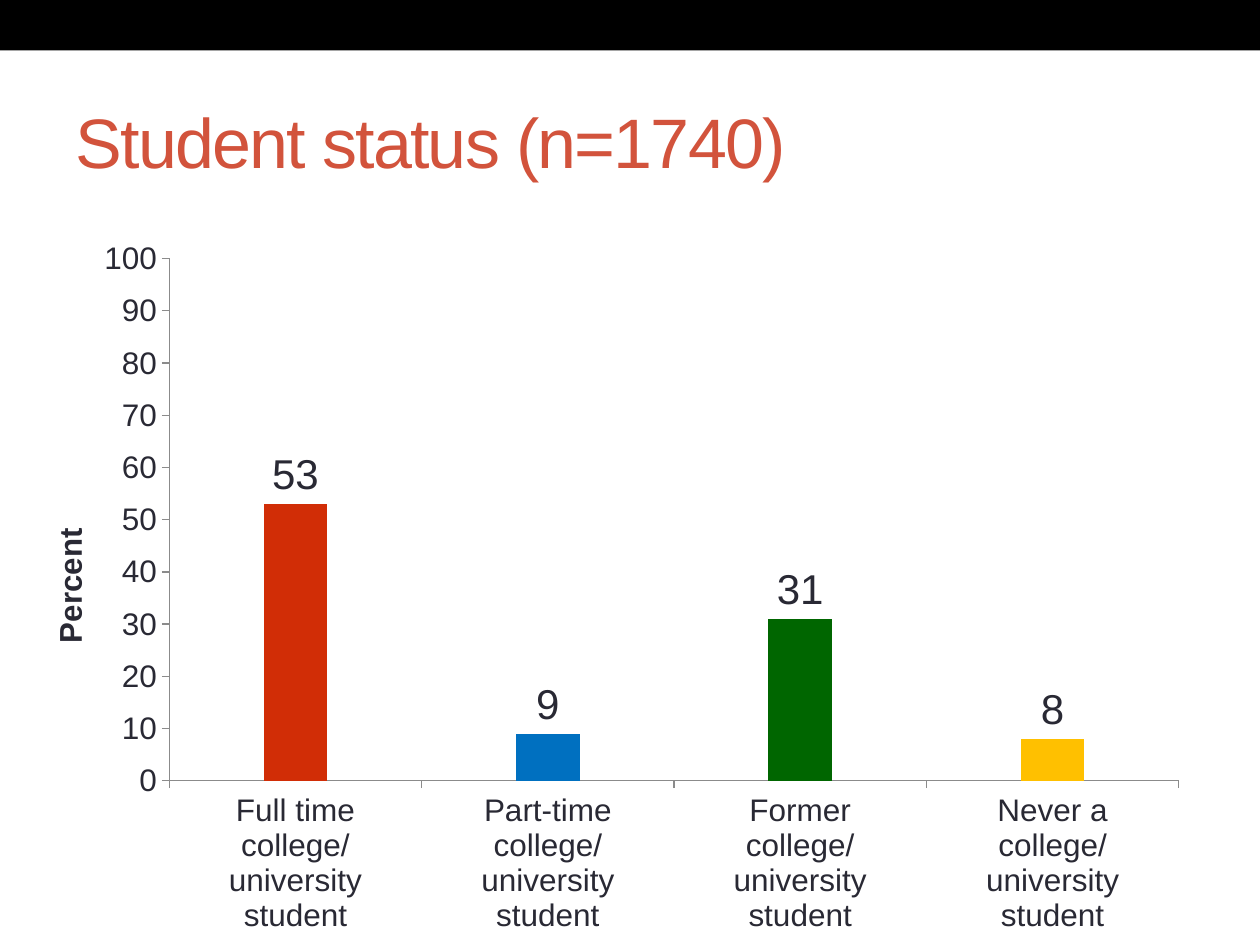
from lxml.etree import SubElement
from pptx import Presentation
from pptx.chart.data import CategoryChartData
from pptx.dml.color import RGBColor
from pptx.enum.chart import XL_CHART_TYPE, XL_LABEL_POSITION, XL_TICK_MARK
from pptx.enum.shapes import MSO_SHAPE
from pptx.enum.text import MSO_ANCHOR, PP_ALIGN
from pptx.oxml import parse_xml
from pptx.oxml.ns import nsdecls, qn
from pptx.util import Cm, Pt

FONT = "Arial"
INK = "292934"
ACCENT = "D2533C"
AXIS_GREY = "8B8B8B"
STATUSES = [
    ("Full time college/university student", 53, "D12D06"),
    ("Part-time college/university student", 9, "0070C0"),
    ("Former college/university student", 31, "006600"),
    ("Never a college/university student", 8, "FFC000"),
]


def colour(value):
    return RGBColor.from_string(value)


def paint(target, value):
    target.fill.solid()
    target.fill.fore_color.rgb = colour(value)


def style_font(font, size, value=INK, bold=False):
    font.name = FONT
    font.size = Pt(size)
    font.bold = bold
    font.color.rgb = colour(value)


def write_text(frame, text, size, value=INK, bold=False, align=None, spacing=None):
    para = frame.paragraphs[0]
    para.alignment = align
    span = para.add_run()
    span.text = text
    style_font(span.font, size, value, bold)
    if spacing is not None:
        span.font._element.set("spc", str(spacing))


def set_layout(parent, index, **settings):
    """Give a chart part a manual layout, placed as its child at index."""
    old = parent.find(qn("c:layout"))
    if old is not None:
        parent.remove(old)
    layout = parse_xml(f"<c:layout {nsdecls('c')}><c:manualLayout/></c:layout>")
    for tag, value in settings.items():
        SubElement(layout[0], qn(f"c:{tag}")).set("val", str(value))
    parent.insert(index, layout)


def add_top_band(page, left, top, width, height):
    band = page.shapes.add_shape(MSO_SHAPE.RECTANGLE, left, top, width, height)
    band.shadow.inherit = False
    paint(band, "000000")
    band.line.fill.background()


def place_title(page, text, left, top, width, height):
    title = page.shapes.title
    title.left, title.top, title.width, title.height = left, top, width, height
    frame = title.text_frame
    frame.vertical_anchor = MSO_ANCHOR.MIDDLE
    write_text(frame, text, 40, ACCENT, align=PP_ALIGN.LEFT, spacing=-100)


def style_axis(axis):
    axis.has_major_gridlines = False
    axis.major_tick_mark = XL_TICK_MARK.OUTSIDE
    axis.minor_tick_mark = XL_TICK_MARK.NONE
    axis.format.line.color.rgb = colour(AXIS_GREY)
    axis.format.line.width = Pt(0.75)
    style_font(axis.tick_labels.font, 18)


def add_status_chart(page, left, top, width, height):
    data = CategoryChartData()
    data.categories = [name for name, _, _ in STATUSES]
    data.add_series("Series 1", [percent for _, percent, _ in STATUSES])
    chart = page.shapes.add_chart(
        XL_CHART_TYPE.COLUMN_CLUSTERED, left, top, width, height, data
    ).chart
    chart.has_legend = False
    chart.has_title = False
    style_font(chart.font, 18)

    style_axis(chart.category_axis)
    percent_axis = chart.value_axis
    style_axis(percent_axis)
    percent_axis.minimum_scale, percent_axis.maximum_scale = 0, 100
    percent_axis.major_unit = 10
    axis_title = percent_axis.axis_title
    write_text(axis_title.text_frame, "Percent", 18, bold=True)
    axis_title.text_frame._txBody.bodyPr.set("rot", "-5400000")
    axis_title.text_frame._txBody.bodyPr.set("vert", "horz")
    set_layout(axis_title._element, 1, xMode="edge", yMode="edge", x=0.01, y=0.42)

    plot = chart.plots[0]
    plot.gap_width = 297
    plot.vary_by_categories = False
    plot.has_data_labels = True
    labels = plot.data_labels
    labels.show_value = True
    labels.position = XL_LABEL_POSITION.OUTSIDE_END
    style_font(labels.font, 24)
    series = plot.series[0]
    paint(series.format, "93A299")
    for index, (_, _, fill) in enumerate(STATUSES):
        paint(series.points[index].format, fill)
    set_layout(
        chart._chartSpace.chart.plotArea, 0, layoutTarget="inner",
        xMode="edge", yMode="edge", x=0.118, y=0.04, w=0.866, h=0.75,
    )


def main():
    deck = Presentation()
    deck.slide_width, deck.slide_height = Cm(25.4), Cm(19.05)
    page = deck.slides.add_slide(deck.slide_layouts[5])
    add_top_band(page, 0, 0, deck.slide_width, Cm(1.02))
    place_title(page, "Student status (n=1740)", Cm(1.27), Cm(1.47), Cm(22.86), Cm(2.74))
    add_status_chart(page, Cm(0.64), Cm(4.65), Cm(23.5), Cm(14.17))
    deck.save("out.pptx")


if __name__ == "__main__":
    main()
